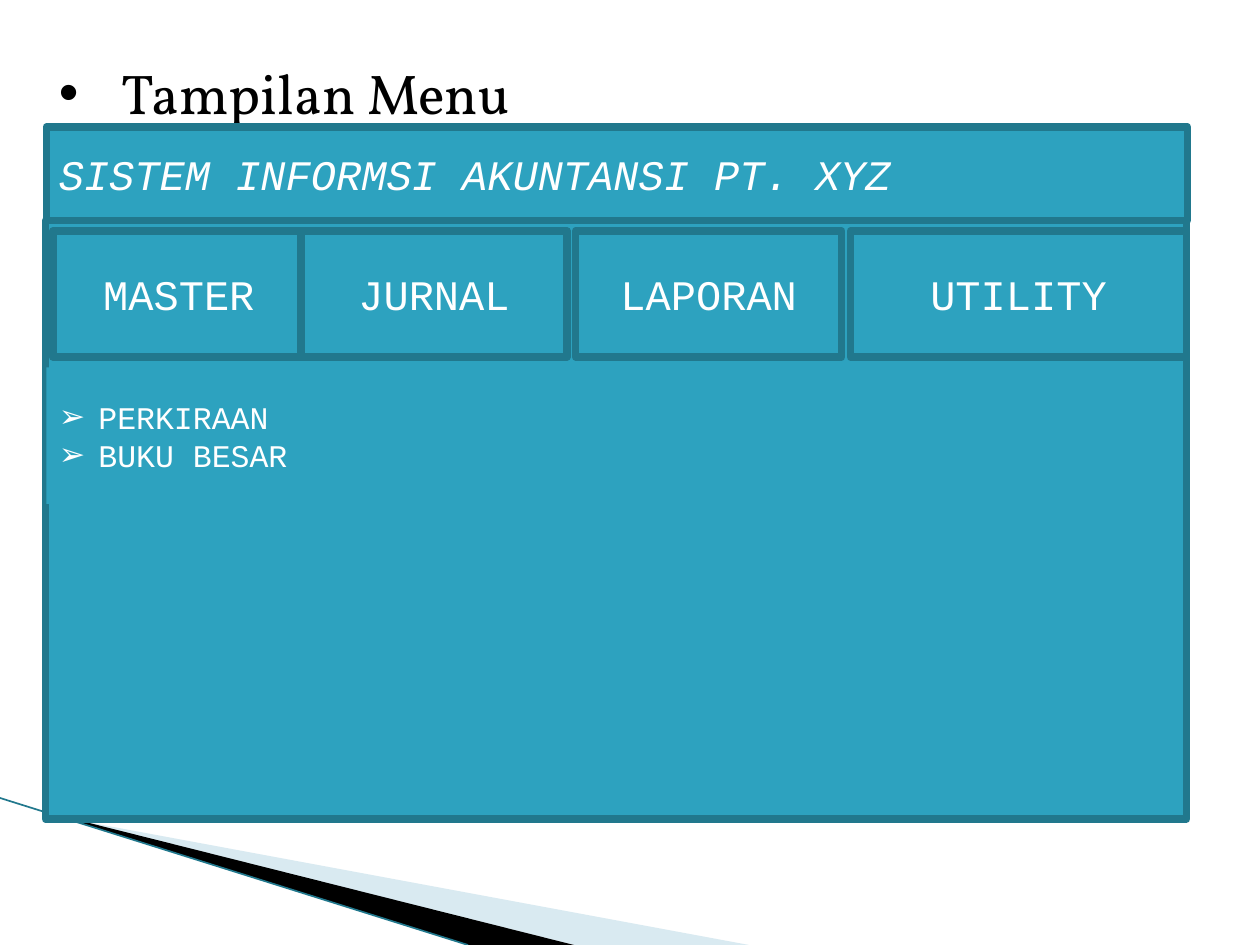
from lxml.etree import SubElement
from pptx import Presentation
from pptx.dml.color import RGBColor as RGB
from pptx.enum.shapes import MSO_CONNECTOR as Conn, MSO_SHAPE as Kind
from pptx.enum.text import MSO_ANCHOR as Anchor, MSO_AUTO_SIZE as Fit, PP_ALIGN as Align
from pptx.oxml.ns import qn
from pptx.util import Pt

HUES = {"fill": "2DA2BF", "edge": "21788D", "pale": "A0CBDC",
        "ink": "000000", "text": "FFFFFF"}
MONO = "Courier New"
TITLE = "Tampilan Menu"
HEADER = "SISTEM INFORMSI AKUNTANSI PT. XYZ"
ITEMS = ["PERKIRAAN", "BUKU BESAR"]
# label, left, width
MENU = [("MASTER", 30.2, 144), ("JURNAL", 172, 152),
        ("LAPORAN", 329, 152), ("UTILITY", 486, 192)]
MENU_TOP, MENU_HIGH = 132, 72
# points, fill, opacity in percent
WEDGES = [([(39.6, 468.4), (428.4, 540), (328.3, 540)], "pale", 40),
          ([(38.3, 467.3), (328.5, 540), (268, 540), (38.9, 468)], "ink", 100)]

deck = Presentation()
deck.slide_width, deck.slide_height = Pt(720), Pt(540)
slide = deck.slides.add_slide(deck.slide_layouts[1])
shapes = slide.shapes


def hue(name):
    return RGB.from_string(HUES[name])


def paint(shape, name):
    shape.fill.solid()
    shape.fill.fore_color.rgb = hue(name)


def place(shape, left, top, width, height):
    shape.left, shape.top = Pt(left), Pt(top)
    shape.width, shape.height = Pt(width), Pt(height)


def style(para, size, face=MONO, color="text", align=Align.LEFT):
    para.alignment = align
    para.space_before = Pt(0)
    font = para.font
    font.size, font.name, font.color.rgb = Pt(size), face, hue(color)
    return font


def bullet(para, mark, indent):
    props = para._p.get_or_add_pPr()
    props.set("marL", str(Pt(indent)))
    props.set("indent", str(-Pt(indent)))
    SubElement(props, qn("a:buFont")).set("typeface", "Arial")
    SubElement(props, qn("a:buChar")).set("char", mark)


def box(left, top, width, height, text="", align=Align.LEFT):
    shape = shapes.add_shape(Kind.RECTANGLE, Pt(left), Pt(top), Pt(width), Pt(height))
    shape.shadow.inherit = False
    paint(shape, "fill")
    shape.line.color.rgb = hue("edge")
    shape.line.width = Pt(4.33)
    frame = shape.text_frame
    frame.vertical_anchor = Anchor.MIDDLE
    if text:
        frame.text = text
        return style(frame.paragraphs[0], 24, align=align)


def wedge(points, color, alpha):
    pen = shapes.build_freeform(*points[0], scale=float(Pt(1)))
    pen.add_line_segments(points[1:])
    shape = pen.convert_to_shape()
    shape.shadow.inherit = False
    paint(shape, color)
    shape.line.fill.background()
    if alpha < 100:
        tint = shape.fill._xPr.find(".//" + qn("a:srgbClr"))
        SubElement(tint, qn("a:alpha")).set("val", str(alpha * 1000))


for item in WEDGES:
    wedge(*item)
line = shapes.add_connector(Conn.STRAIGHT, Pt(0), Pt(456), Pt(267.5), Pt(540))
line.line.color.rgb = hue("edge")
line.line.width = Pt(0.95)
SubElement(line._element.spPr, qn("a:effectLst"))

box(26, 126, 652, 342)
for label, left, width in MENU:
    box(left, MENU_TOP, width, MENU_HIGH, label, Align.CENTER)

title = shapes.title
place(title, 26.5, 30, 652, 85)
frame = title.text_frame
frame.text = TITLE
frame.auto_size, frame.vertical_anchor = Fit.NONE, Anchor.TOP
bullet(frame.paragraphs[0], "•", 36)
style(frame.paragraphs[0], 32, "Vollkorn", "ink").underline = True

box(26.5, 72.5, 652, 53.5, HEADER).italic = True

body = slide.placeholders[1]
place(body, 26.5, 210, 145.5, 78)
paint(body, "fill")
frame = body.text_frame
frame.text = "\n".join(ITEMS)
frame.auto_size, frame.vertical_anchor = Fit.NONE, Anchor.MIDDLE
for para in frame.paragraphs:
    bullet(para, "➢", 22.5)
    style(para, 18)
body._element.getparent().append(body._element)  # bring to front

deck.save("out.pptx")
